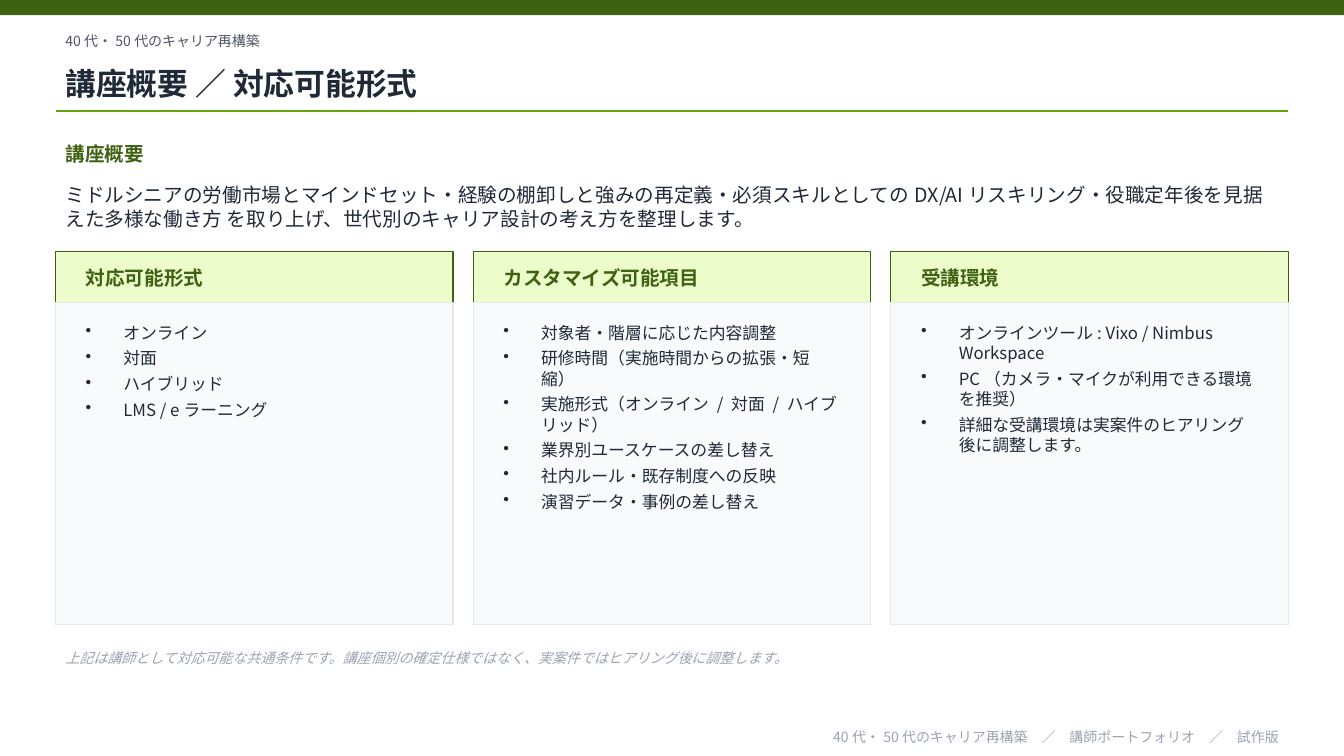
from lxml.etree import SubElement
from pptx import Presentation
from pptx.dml.color import RGBColor
from pptx.enum.shapes import MSO_CONNECTOR, MSO_SHAPE
from pptx.enum.text import MSO_ANCHOR, PP_ALIGN
from pptx.oxml.ns import qn
from pptx.util import Cm, Pt

FONT = "Noto Sans CJK JP"
DARK_GREEN = RGBColor(0x3F, 0x62, 0x12)
GREEN = RGBColor(0x65, 0xA3, 0x0D)
PALE_GREEN = RGBColor(0xEC, 0xFC, 0xCB)
INK = RGBColor(0x1F, 0x29, 0x37)
SLATE = RGBColor(0x4B, 0x55, 0x63)
MUTED = RGBColor(0x9C, 0xA3, 0xAF)
PANEL = RGBColor(0xF9, 0xFA, 0xFB)
PANEL_EDGE = RGBColor(0xE5, 0xE7, 0xEB)

SLIDE_WIDTH, SLIDE_HEIGHT = Cm(33.87), Cm(19.05)
MARGIN = Cm(1.4)
CONTENT_WIDTH = SLIDE_WIDTH - 2 * MARGIN
COLUMN_GAP = Cm(0.51)
BULLET_INDENT = Cm(0.95)

COURSE = "40代・50代のキャリア再構築"
SUMMARY = (
    "ミドルシニアの労働市場とマインドセット・経験の棚卸しと強みの再定義・"
    "必須スキルとしてのDX/AIリスキリング・役職定年後を見据えた多様な働き方 "
    "を取り上げ、世代別のキャリア設計の考え方を整理します。"
)
CARDS = [
    ("対応可能形式", ["オンライン", "対面", "ハイブリッド", "LMS / eラーニング"]),
    ("カスタマイズ可能項目", [
        "対象者・階層に応じた内容調整",
        "研修時間（実施時間からの拡張・短縮）",
        "実施形式（オンライン / 対面 / ハイブリッド）",
        "業界別ユースケースの差し替え",
        "社内ルール・既存制度への反映",
        "演習データ・事例の差し替え",
    ]),
    ("受講環境", [
        "オンラインツール: Vixo / Nimbus Workspace",
        "PC（カメラ・マイクが利用できる環境を推奨）",
        "詳細な受講環境は実案件のヒアリング後に調整します。",
    ]),
]
NOTE = (
    "上記は講師として対応可能な共通条件です。"
    "講座個別の確定仕様ではなく、実案件ではヒアリング後に調整します。"
)


def style(paragraph, size, color, bold=False, italic=False):
    font = paragraph.font
    font.name = FONT
    font.size = Pt(size)
    font.color.rgb = color
    font.bold = bold
    font.italic = italic
    east_asian = SubElement(paragraph._p.pPr.find(qn("a:defRPr")), qn("a:ea"))
    east_asian.set("typeface", FONT)


def add_frame(slide, left, top, width, height, anchor=MSO_ANCHOR.MIDDLE):
    frame = slide.shapes.add_textbox(left, top, width, height).text_frame
    frame.word_wrap = True
    frame.vertical_anchor = anchor
    return frame


def add_text(slide, text, left, top, width, height, size, color,
             bold=False, italic=False, align=PP_ALIGN.LEFT):
    paragraph = add_frame(slide, left, top, width, height).paragraphs[0]
    paragraph.text = text
    paragraph.alignment = align
    style(paragraph, size, color, bold, italic)


def add_bullets(slide, items, left, top, width, height):
    frame = add_frame(slide, left, top, width, height, MSO_ANCHOR.TOP)
    for index, item in enumerate(items):
        paragraph = frame.add_paragraph() if index else frame.paragraphs[0]
        paragraph.text = item
        properties = paragraph._p.get_or_add_pPr()
        properties.set("marL", str(BULLET_INDENT))
        properties.set("indent", str(-BULLET_INDENT))
        SubElement(properties, qn("a:buChar")).set("char", "•")
        paragraph.space_after = Pt(4)
        style(paragraph, 12, INK)


def add_panel(slide, left, top, width, height, fill, edge=None):
    panel = slide.shapes.add_shape(MSO_SHAPE.RECTANGLE, left, top, width, height)
    panel.shadow.inherit = False
    panel.fill.solid()
    panel.fill.fore_color.rgb = fill
    if edge is None:
        panel.line.fill.background()
    else:
        panel.line.color.rgb = edge
        panel.line.width = Pt(0.75)


def add_header(slide, left, width):
    add_panel(slide, 0, 0, SLIDE_WIDTH, Cm(0.38), DARK_GREEN)
    add_text(slide, COURSE, left, Cm(0.64), width, Cm(0.76), 10, SLATE)
    add_text(slide, "講座概要 ／ 対応可能形式", left, Cm(1.4), width, Cm(1.4),
             22, INK, bold=True)
    rule_top = Cm(2.8)
    rule = slide.shapes.add_connector(
        MSO_CONNECTOR.STRAIGHT, left, rule_top, left + width, rule_top)
    rule.line.color.rgb = GREEN
    rule.line.width = Pt(1)
    SubElement(rule._element.spPr, qn("a:effectLst"))


def add_overview(slide, left, top, width):
    add_text(slide, "講座概要", left, top, width, Cm(0.89), 14, DARK_GREEN, bold=True)
    add_text(slide, SUMMARY, left, top + Cm(1.02), width, Cm(1.52), 14, INK)


def add_card(slide, heading, items, left, top, width, height):
    heading_height = Cm(1.27)
    inset = Cm(0.51)
    text_left, text_width = left + inset, width - 2 * inset
    body_top, body_height = top + heading_height, height - heading_height
    add_panel(slide, left, top, width, heading_height, PALE_GREEN, DARK_GREEN)
    add_text(slide, heading, text_left, top, text_width, heading_height,
             14, DARK_GREEN, bold=True)
    add_panel(slide, left, body_top, width, body_height, PANEL, PANEL_EDGE)
    add_bullets(slide, items, text_left, body_top + Cm(0.38),
                text_width, body_height - Cm(0.89))


def add_cards(slide, left, top, width, height):
    card_width = (width - COLUMN_GAP * (len(CARDS) - 1)) // len(CARDS)
    for column, (heading, items) in enumerate(CARDS):
        card_left = left + column * (card_width + COLUMN_GAP)
        add_card(slide, heading, items, card_left, top, card_width, height)


def add_footer(slide, left, width):
    add_text(slide, NOTE, left, Cm(16.13), width, Cm(0.89), 10, MUTED, italic=True)
    add_text(slide, f"{COURSE}　／　講師ポートフォリオ　／　試作版",
             left, Cm(18.29), width, Cm(0.56), 10, MUTED, align=PP_ALIGN.RIGHT)


def main():
    presentation = Presentation()
    presentation.slide_width = SLIDE_WIDTH
    presentation.slide_height = SLIDE_HEIGHT
    slide = presentation.slides.add_slide(presentation.slide_layouts[6])
    add_header(slide, MARGIN, CONTENT_WIDTH)
    add_overview(slide, MARGIN, Cm(3.43), CONTENT_WIDTH)
    add_cards(slide, MARGIN, Cm(6.35), CONTENT_WIDTH, Cm(9.4))
    add_footer(slide, MARGIN, CONTENT_WIDTH)
    presentation.save("out.pptx")


if __name__ == "__main__":
    main()
